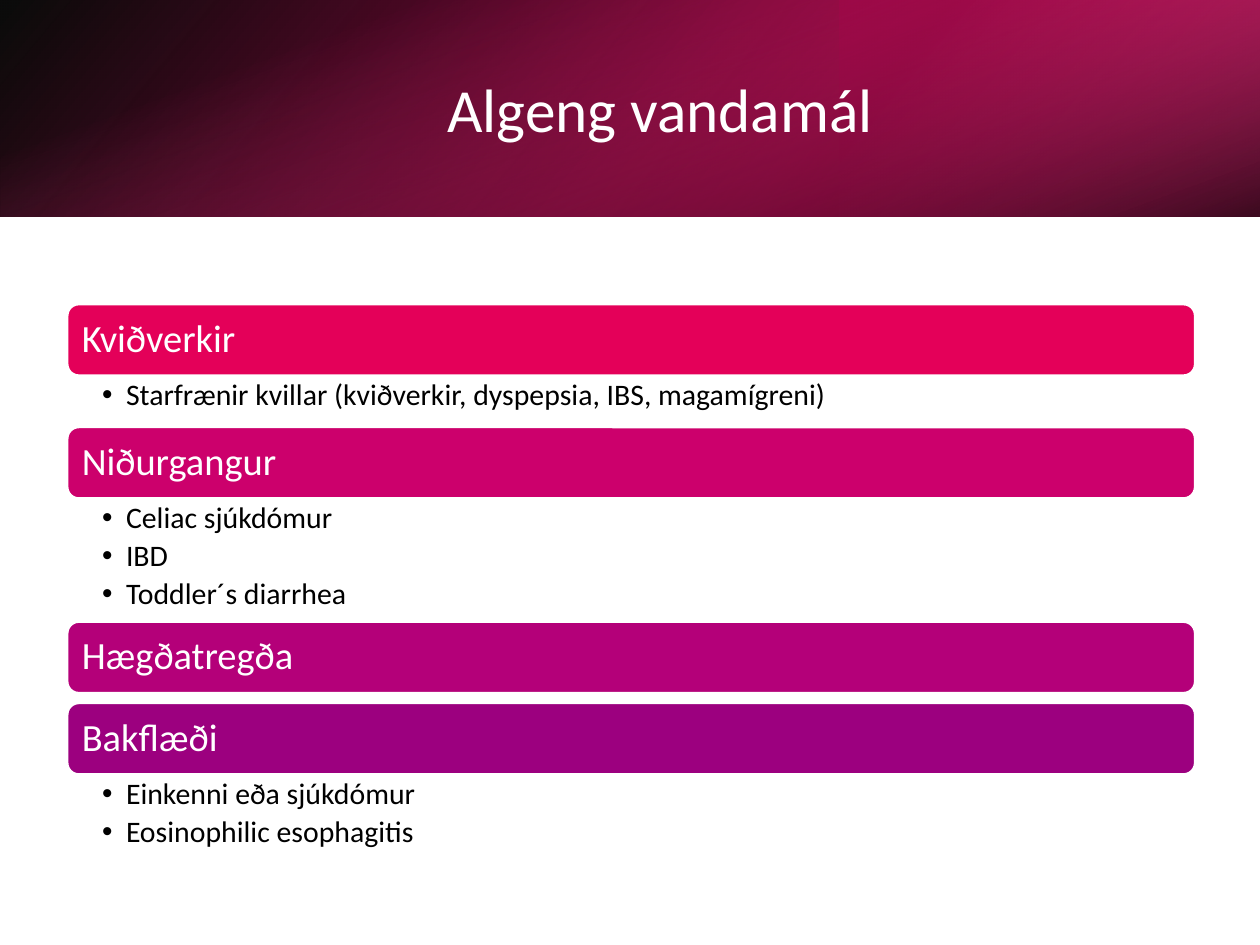
import pptx
import pptx.dml.color
import pptx.enum.shapes
import pptx.enum.text
import pptx.oxml
import pptx.oxml.ns
import pptx.util

Pt = pptx.util.Pt
SHAPES = pptx.enum.shapes.MSO_SHAPE
ANCHOR = pptx.enum.text.MSO_ANCHOR
ALIGN = pptx.enum.text.PP_ALIGN

# Content
TITLE = "Algeng vandamál"
# heading, colour name, list items, height of the space below the heading
TOPICS = [
    ("Kviðverkir", "red",
     ["Starfrænir kvillar (kviðverkir, dyspepsia, IBS, magamígreni)"], 28.8),
    ("Niðurgangur", "pink", ["Celiac sjúkdómur", "IBD", "Toddler´s diarrhea"], 69.84),
    ("Hægðatregða", "magenta", [], 5.04),
    ("Bakflæði", "purple", ["Einkenni eða sjúkdómur", "Eosinophilic esophagitis"], 46.8),
]
COLORS = {
    "white": "FFFFFF", "black": "000000",
    "red": "E40059", "pink": "CC006C", "magenta": "B40079", "purple": "9C007F",
    "crimson": "E90062", "wine": "9C0042", "rose": "FF388C",
}
# box, rotation, flipped, gradient angle, stops (position, colour, opacity)
BANDS = [
    ((0, 0, 720, 123.84), 0, True, 140,
     [(0, "black", 96), (100, "crimson", 100)]),
    ((480, 0, 240, 123.84), 180, True, 320,
     [(19, "wine", 68), (100, "rose", 79)]),
    ((298.08, -298.08, 123.84, 720), 90, False, 340,
     [(23, "rose", 0), (99, "black", 74)]),
]
FONT = "Calibri"
LEFT, TOP, WIDTH, HEADING_HEIGHT = 38.16, 173.52, 645.12, 41.4


def rgb(name):
    return pptx.dml.color.RGBColor.from_string(COLORS[name])


def place(shape, left, top, width, height):
    shape.left, shape.top = Pt(left), Pt(top)
    shape.width, shape.height = Pt(width), Pt(height)


def set_frame(frame, anchor, left, top, right, bottom):
    frame.word_wrap = True
    frame.auto_size = pptx.enum.text.MSO_AUTO_SIZE.NONE
    frame.vertical_anchor = anchor
    frame.margin_left, frame.margin_top = Pt(left), Pt(top)
    frame.margin_right, frame.margin_bottom = Pt(right), Pt(bottom)


def format_para(para, size, color, align, spacing=0.9, after=0):
    para.alignment = align
    para.line_spacing = spacing
    para.space_before, para.space_after = Pt(0), Pt(after)
    for span in para.runs:
        span.font.name, span.font.size = FONT, Pt(size)
        span.font.bold = False
        span.font.color.rgb = rgb(color)


def add_bullet(para, indent):
    props = para._p.get_or_add_pPr()
    props.set("marL", str(Pt(indent)))
    props.set("indent", str(-Pt(indent)))
    props.append(pptx.oxml.parse_xml(
        f'<a:buFont {pptx.oxml.ns.nsdecls("a")} typeface="Arial"/>'))
    props.append(pptx.oxml.parse_xml(
        f'<a:buChar {pptx.oxml.ns.nsdecls("a")} char="•"/>'))


def set_gradient(shape, angle, stops):
    stop_xml = "".join(
        f'<a:gs pos="{position * 1000}"><a:srgbClr val="{COLORS[color]}">'
        f'<a:alpha val="{opacity * 1000}"/></a:srgbClr></a:gs>'
        for position, color, opacity in stops)
    gradient = pptx.oxml.parse_xml(
        f'<a:gradFill {pptx.oxml.ns.nsdecls("a")} rotWithShape="1">'
        f'<a:gsLst>{stop_xml}</a:gsLst>'
        f'<a:lin ang="{angle * 60000}" scaled="0"/></a:gradFill>')
    shape._element.spPr.find(pptx.oxml.ns.qn("a:prstGeom")).addnext(gradient)


def add_box(page, kind, box):
    shape = page.shapes.add_shape(kind, *(Pt(length) for length in box))
    shape.shadow.inherit = False
    return shape


def main():
    deck = pptx.Presentation()
    deck.slide_width, deck.slide_height = Pt(720), Pt(540)
    page = deck.slides.add_slide(deck.slide_layouts.get_by_name("Comparison"))
    title = page.shapes.title
    bodies = [holder for holder in page.placeholders
              if holder.placeholder_format.idx in (1, 2, 3, 4)]

    # Header bands
    for box, rotation, flipped, angle, stops in BANDS:
        band = add_box(page, SHAPES.RECTANGLE, box)
        band.line.fill.background()
        band.rotation = rotation
        if flipped:
            band._element.spPr.xfrm.set("flipH", "1")
        set_gradient(band, angle, stops)

    # Title, brought in front of the bands
    page.shapes._spTree.append(title._element)
    place(title, 80.64, 27.36, 593.28, 69.12)
    title.text_frame.text = TITLE
    set_frame(title.text_frame, ANCHOR.MIDDLE, 7.2, 3.6, 7.2, 3.6)
    format_para(title.text_frame.paragraphs[0], 35, "white", ALIGN.CENTER, spacing=1.0)

    # Headings with their lists
    top = TOP
    for heading, color, items, space_below in TOPICS:
        bar = add_box(page, SHAPES.ROUNDED_RECTANGLE, (LEFT, top, WIDTH, HEADING_HEIGHT))
        bar.fill.solid()
        bar.fill.fore_color.rgb = rgb(color)
        bar.line.color.rgb = rgb("white")
        bar.line.width = Pt(2)
        bar.text_frame.text = heading
        # the round corners already inset the text by about 2 points
        set_frame(bar.text_frame, ANCHOR.MIDDLE, 6.6, 4, 6.6, 4)
        format_para(bar.text_frame.paragraphs[0], 22, "white", ALIGN.LEFT)
        top += HEADING_HEIGHT

        if items:
            body = bodies.pop(0)
            place(body, LEFT, top, WIDTH, space_below)
            body.text_frame.text = "\n".join(items)
            set_frame(body.text_frame, ANCHOR.TOP, 20.16, 2.16, 12.24, 2.16)
            for para in body.text_frame.paragraphs:
                para.level = 1
                add_bullet(para, 13.68)
                format_para(para, 17, "black", ALIGN.LEFT, after=3.4)
        top += space_below

    # Unused placeholders
    for body in bodies:
        body._element.getparent().remove(body._element)

    deck.save("out.pptx")


if __name__ == "__main__":
    main()
